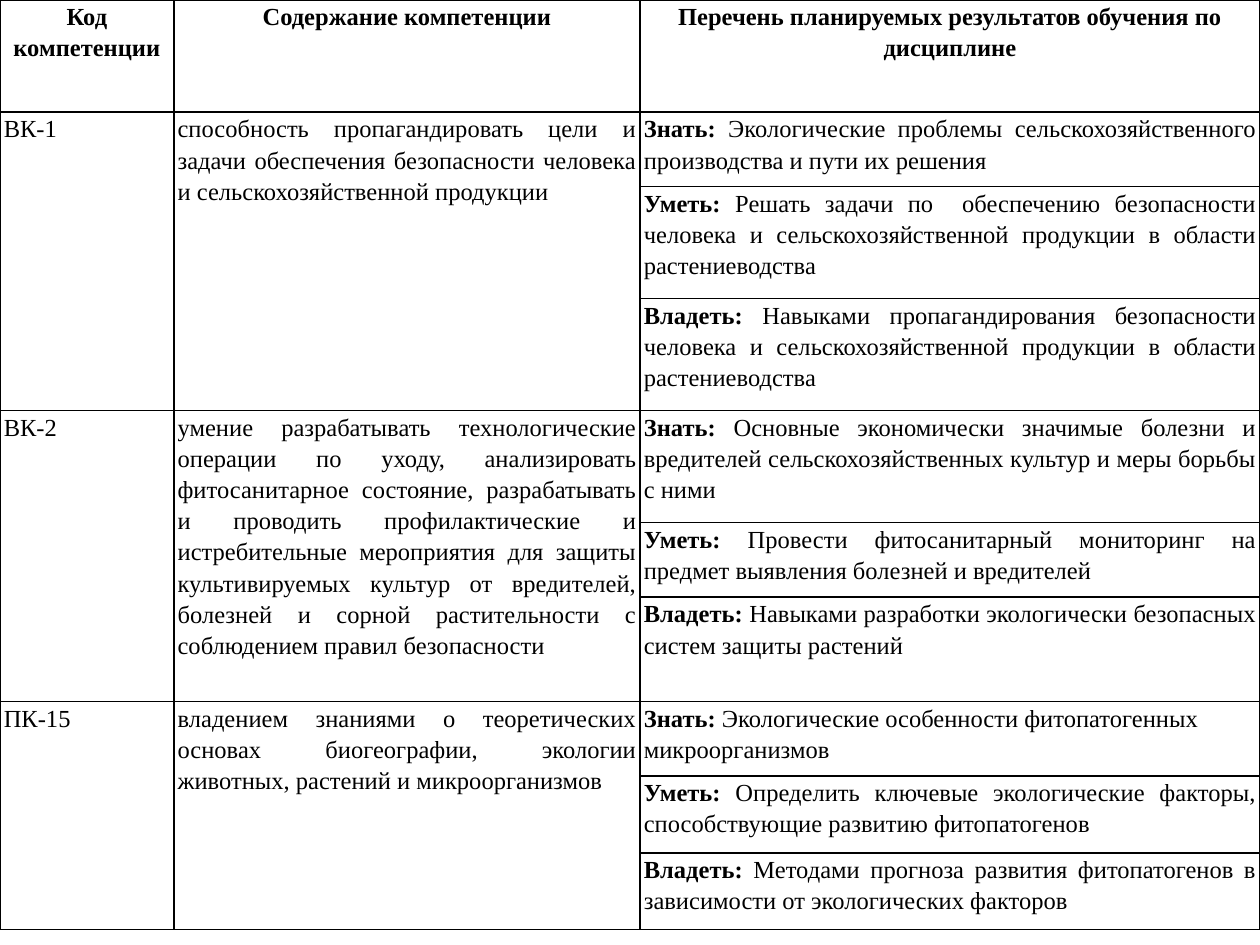
import pptx
import pptx.dml.color
import pptx.enum.text
import pptx.oxml
import pptx.oxml.ns
import pptx.util
from pptx.util import Inches

BLACK = pptx.dml.color.RGBColor(0, 0, 0)
ALIGN = pptx.enum.text.PP_ALIGN
COLUMN_WIDTHS = [1.38, 3.7, 4.92]
ROW_HEIGHTS = [0.89, 0.59, 0.89, 0.89, 0.89, 0.59, 0.83, 0.59, 0.61, 0.61]
HEADINGS = ["Код компетенции", "Содержание компетенции",
            "Перечень планируемых результатов обучения по дисциплине"]
OUTCOME_LABELS = ["Знать:", "Уметь:", "Владеть:"]
COMPETENCIES = [
    ("ВК-1",
     "способность пропагандировать цели и задачи обеспечения безопасности человека "
     "и сельскохозяйственной продукции",
     ["Экологические проблемы сельскохозяйственного производства и пути их решения",
      "Решать задачи по  обеспечению безопасности человека и сельскохозяйственной "
      "продукции в области растениеводства",
      "Навыками пропагандирования безопасности человека и сельскохозяйственной "
      "продукции в области растениеводства"]),
    ("ВК-2",
     "умение разрабатывать технологические операции по уходу, анализировать "
     "фитосанитарное состояние, разрабатывать и проводить профилактические и "
     "истребительные мероприятия для защиты культивируемых культур от вредителей, "
     "болезней и сорной растительности с соблюдением правил безопасности",
     ["Основные экономически значимые болезни и вредителей сельскохозяйственных "
      "культур и меры борьбы с ними",
      "Провести фитосанитарный мониторинг на предмет выявления болезней и вредителей",
      "Навыками разработки экологически безопасных систем защиты растений"]),
    ("ПК-15",
     "владением знаниями о теоретических основах биогеографии, экологии животных, "
     "растений и микроорганизмов",
     ["Экологические особенности фитопатогенных микроорганизмов",
      "Определить ключевые экологические факторы, способствующие развитию фитопатогенов",
      "Методами прогноза развития фитопатогенов в зависимости от экологических факторов"]),
]


class SlideBuilder:
    """Holds the table style and the current slide."""

    font_name = "Times New Roman"
    font_size = pptx.util.Pt(14)
    border_width = pptx.util.Pt(1)

    def __init__(self, slide):
        self.slide = slide

    def add_table(self, column_widths, row_heights):
        shape = self.slide.shapes.add_table(
            len(row_heights), len(column_widths), 0, 0,
            Inches(sum(column_widths)), Inches(sum(row_heights)))
        table = shape.table
        table.first_row = table.horz_banding = False
        for column, width in zip(table.columns, column_widths):
            column.width = Inches(width)
        for row, height in zip(table.rows, row_heights):
            row.height = Inches(height)
        for cell in table.iter_cells():
            self.format_cell(cell)
        return table

    def format_cell(self, cell):
        cell.margin_left = cell.margin_right = Inches(0.03)
        cell.margin_top = cell.margin_bottom = 0
        properties = cell._tc.get_or_add_tcPr()
        for side in "LRTB":
            properties.append(pptx.oxml.parse_xml(
                f'<a:ln{side} {pptx.oxml.ns.nsdecls("a")} w="{self.border_width}">'
                f'<a:solidFill><a:srgbClr val="{BLACK}"/></a:solidFill></a:ln{side}>'))
        cell.fill.background()

    def add_cell_text(self, cell, text, label="", bold=False,
                      alignment=ALIGN.JUSTIFY, space_after=10):
        paragraph = cell.text_frame.paragraphs[0]
        paragraph.alignment = alignment
        paragraph.line_spacing = 1.15
        paragraph.space_after = pptx.util.Pt(space_after)
        parts = [(label, True), (f" {text}", bold)] if label else [(text, bold)]
        for content, is_bold in parts:
            run = paragraph.add_run()
            run.text = content
            run.font.name = self.font_name
            run.font.size = self.font_size
            run.font.bold = is_bold
            run.font.color.rgb = BLACK


def main():
    presentation = pptx.Presentation()
    presentation.slide_width = Inches(10)
    presentation.slide_height = Inches(7.5)
    builder = SlideBuilder(presentation.slides.add_slide(presentation.slide_layouts[6]))
    table = builder.add_table(COLUMN_WIDTHS, ROW_HEIGHTS)

    for column, heading in enumerate(HEADINGS):
        builder.add_cell_text(table.cell(0, column), heading, bold=True, alignment=ALIGN.CENTER)

    exceptions = {
        ("ПК-15", "Знать:"): {"alignment": ALIGN.LEFT, "space_after": 0},
        ("ПК-15", "Владеть:"): {"space_after": 0},
    }
    span = len(OUTCOME_LABELS)
    for index, (code, content, outcomes) in enumerate(COMPETENCIES):
        top = 1 + index * span
        for column, text in enumerate([code, content]):
            cell = table.cell(top, column)
            cell.merge(table.cell(top + span - 1, column))
            builder.add_cell_text(cell, text)
        for offset, (label, outcome) in enumerate(zip(OUTCOME_LABELS, outcomes)):
            builder.add_cell_text(table.cell(top + offset, 2), outcome, label,
                                  **exceptions.get((code, label), {}))

    presentation.save("out.pptx")


if __name__ == "__main__":
    main()
